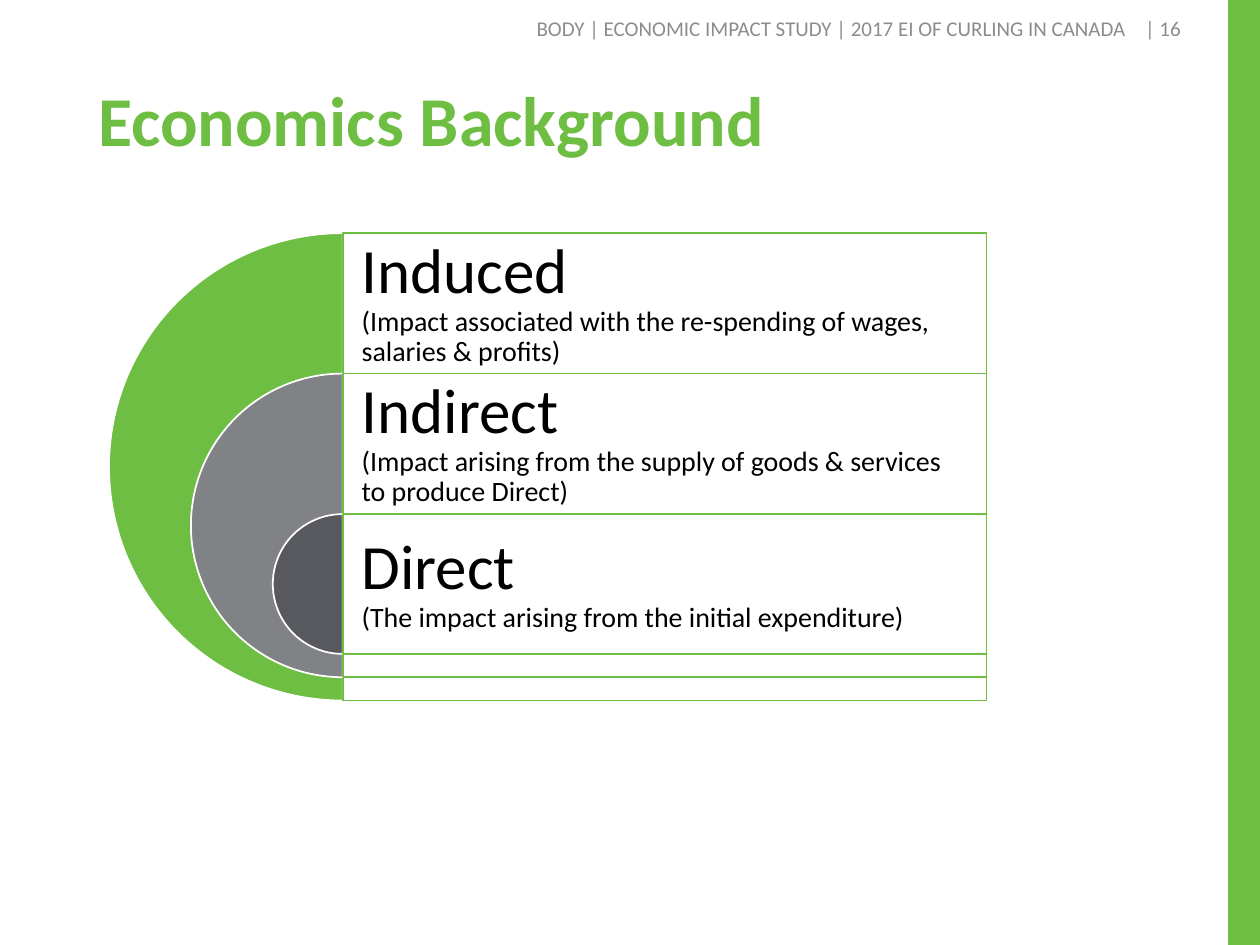
from lxml import etree
from pptx import Presentation
from pptx.dml.color import RGBColor
from pptx.enum.shapes import MSO_SHAPE as Shape
from pptx.enum.text import MSO_ANCHOR as Anchor, PP_ALIGN as Align
from pptx.oxml.ns import qn
from pptx.util import Inches, Pt

GREEN, WHITE, BLACK, GREY = "6FBE44", "FFFFFF", "000000", "8C8C8C"
color = RGBColor.from_string

prs = Presentation()
prs.slide_width, prs.slide_height = Inches(10), Inches(7.5)
slide = prs.slides.add_slide(prs.slide_layouts[6])


def add_block(kind, left, top, width, height, fill, line):
    block = slide.shapes.add_shape(kind, Inches(left), Inches(top), Inches(width), Inches(height))
    block.shadow.inherit = False
    block.fill.solid()
    block.fill.fore_color.rgb = color(fill)
    block.line.color.rgb = color(line)
    block.line.width = Pt(1)
    return block


def add_text(left, top, width, height, lines, ink, bold=False, align=Align.LEFT,
             spacing=1.0, inset=0.1, inset_right=0.1):
    """Place (text, size) lines in one paragraph, parted by line breaks."""
    frame = slide.shapes.add_textbox(
        Inches(left), Inches(top), Inches(width), Inches(height)).text_frame
    frame.word_wrap = True
    frame.vertical_anchor = Anchor.MIDDLE
    frame.margin_left, frame.margin_right = Inches(inset), Inches(inset_right)
    paragraph = frame.paragraphs[0]
    paragraph.alignment = align
    paragraph.line_spacing = spacing
    for i, (text, size) in enumerate(lines):
        if i:
            paragraph.add_line_break()
        run = paragraph.add_run()
        run.text = text
        run.font.name, run.font.size, run.font.bold = "Calibri", Pt(size), bold
        run.font.color.rgb = color(ink)


# Title
add_text(0.68, 0.26, 8.62, 1.45, [("Economics Background", 40)], GREEN, bold=True, spacing=0.9)

# Nested half discs, each with its frame and label
impacts = [
    ("Induced", "(Impact associated with the re-spending of wages, salaries & profits)", GREEN),
    ("Indirect", "(Impact arising from the supply of goods & services to produce Direct)", "818285"),
    ("Direct", "(The impact arising from the initial expenditure)", "58595E"),
]
axis, first_top, frame_width = 2.72, 1.85, 5.11
outer, shrink, band = 3.71, 1.3, 1.115

for i, (impact, meaning, fill) in enumerate(impacts):
    size = outer - i * shrink
    top = first_top + i * band

    half_disc = add_block(Shape.PIE, axis - size / 2, top, size, size, fill, WHITE)
    half_disc.adjustments[0] = 54
    half_disc.adjustments[1] = 162

    frame = add_block(Shape.RECTANGLE, axis, top, frame_width, size, WHITE, GREEN)
    white = frame.fill._xPr.find(qn("a:solidFill"))[0]
    etree.SubElement(white, qn("a:alpha"), val="90000")

    add_text(axis, top, frame_width, band, [(impact, 36), (meaning, 16)], BLACK,
             spacing=0.9, inset=0.15, inset_right=0.15)

# Page number, side bar and running header
add_text(8.97, 0.02, 0.5, 0.4, [("| 16", 12)], GREY, align=Align.RIGHT)
add_block(Shape.RECTANGLE, 9.75, 0, 0.25, 7.5, GREEN, GREEN)
add_text(3.63, 0.06, 5.51, 0.32,
         [("BODY | ECONOMIC IMPACT STUDY | 2017 EI OF CURLING IN CANADA", 12)],
         GREY, align=Align.RIGHT, inset_right=0.2)

prs.save("out.pptx")
